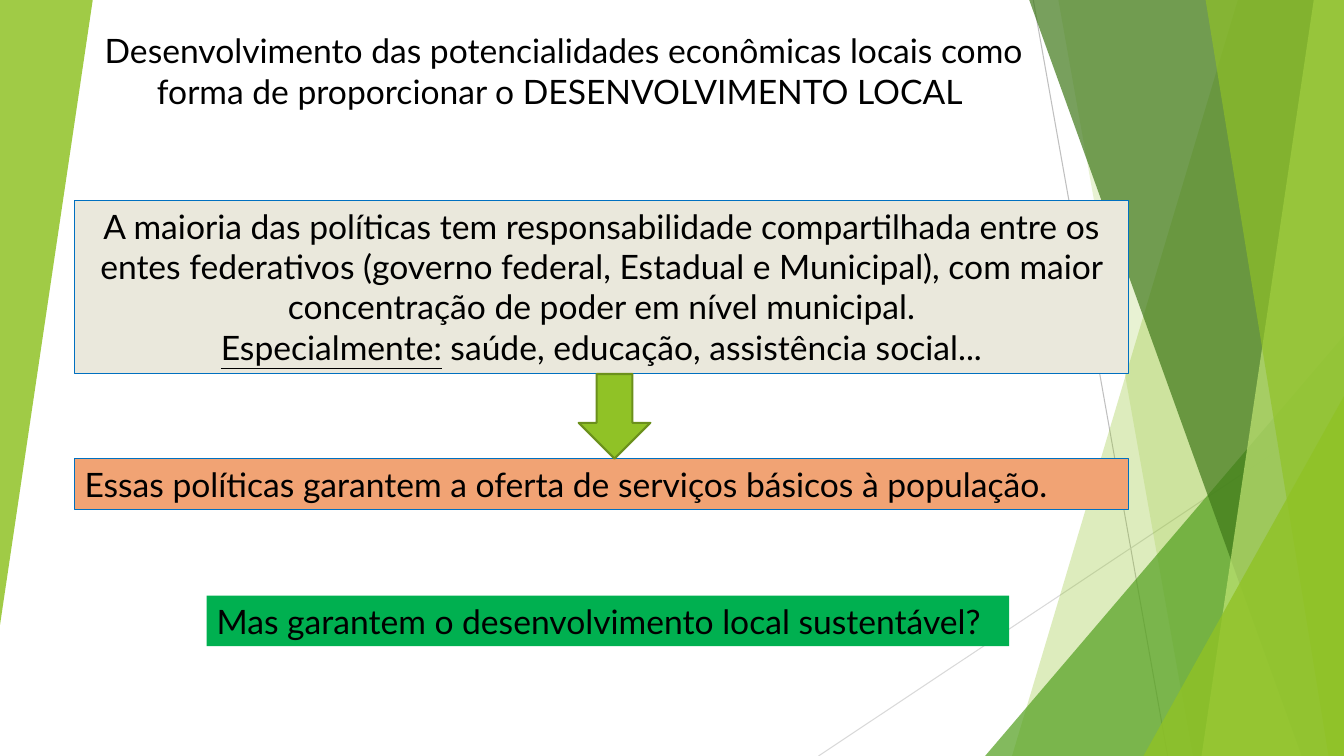
from dataclasses import dataclass
from typing import Optional

import lxml.etree
import pptx
import pptx.dml.color
import pptx.enum.shapes
import pptx.enum.text
import pptx.oxml.ns
import pptx.util

WIDTH = pptx.util.Inches(13.33)
HEIGHT = pptx.util.Inches(7.5)
KINDS = pptx.enum.shapes.MSO_SHAPE
ALIGN = pptx.enum.text.PP_ALIGN


@dataclass(frozen=True)
class Theme:
    font: str = "Lato"
    size: int = 24
    ink: str = "000000"
    lime: str = "90C226"
    leaf: str = "54A021"
    pine: str = "3F7819"
    pale: str = "C0E474"
    moss: str = "6B901C"
    sand: str = "EAE8DC"
    peach: str = "F1A374"
    green: str = "00B050"
    blue: str = "0070C0"
    mist: str = "BFBFBF"
    fog: str = "D9D9D9"
    thin: float = 0.75
    thick: float = 1.5


THEME = Theme()


@dataclass(frozen=True)
class Area:
    left: float
    top: float
    width: float
    height: float


@dataclass(frozen=True)
class Ray:
    start: tuple[float, float]
    end: tuple[float, float]
    color: str


@dataclass(frozen=True)
class Shard:
    top: float
    base: float
    color: str
    alpha: int


@dataclass(frozen=True)
class Wedge:
    area: Area
    color: str
    alpha: int
    turn: int = 0


@dataclass(frozen=True)
class Panel:
    area: Area
    lines: tuple[tuple[str, str], ...]
    fill: Optional[str] = None
    edge: Optional[str] = None
    align: ALIGN = ALIGN.LEFT


RAYS = (
    Ray((76.88, 0), (86.88, 100), THEME.mist),
    Ray((100, 53.73), (60.9, 100), THEME.fog),
)

FACETS = (
    Shard(92.1, 75.3, THEME.lime, 30),
    Shard(78.75, 88.75, THEME.lime, 20),
    Wedge(Area(73.3, 44.4, 26.7, 55.6), THEME.leaf, 72),
    Shard(76.58, 96.85, THEME.pine, 70),
    Shard(97.75, 89.4, THEME.pale, 70),
    Shard(89.7, 98.85, THEME.lime, 65),
    Wedge(Area(85.08, 52.4, 14.92, 47.6), THEME.lime, 80),
    Wedge(Area(0, 0, 6.9, 82.67), THEME.lime, 85, 180),
)

PANELS = (
    Panel(
        Area(4.35, 3.33, 75.17, 12.13),
        (("", "Desenvolvimento das potencialidades econômicas locais como forma "
              "de proporcionar o DESENVOLVIMENTO LOCAL "),),
        align=ALIGN.CENTER,
    ),
    Panel(
        Area(5.55, 26.53, 78.39, 22.93),
        (("", "A maioria das políticas tem responsabilidade compartilhada entre os "
              "entes federativos (governo federal, Estadual e Municipal), com maior "
              "concentração de poder em nível municipal."),
         ("Especialmente:", " saúde, educação, assistência social...")),
        THEME.sand, THEME.blue, ALIGN.CENTER,
    ),
    Panel(
        Area(5.55, 60.67, 78.39, 6.67),
        (("", "Essas políticas garantem a oferta de serviços básicos à população."),),
        THEME.peach, THEME.blue,
    ),
    Panel(
        Area(15.38, 78.8, 59.71, 6.67),
        (("", "Mas garantem o desenvolvimento local sustentável?"),),
        THEME.green,
    ),
)

ARROW = Area(43.06, 49.47, 5.33, 11.2)


def across(share: float) -> int:
    return round(WIDTH * share / 100)


def down(share: float) -> int:
    return round(HEIGHT * share / 100)


def place(area: Area) -> tuple[int, int, int, int]:
    return across(area.left), down(area.top), across(area.width), down(area.height)


def tint(code: str) -> pptx.dml.color.RGBColor:
    return pptx.dml.color.RGBColor.from_string(code)


def paint(shape, fill: Optional[str], edge: Optional[str] = None,
          weight: float = THEME.thin, alpha: int = 100) -> None:
    shape.shadow.inherit = False
    if fill:
        shape.fill.solid()
        shape.fill.fore_color.rgb = tint(fill)
    else:
        shape.fill.background()
    if edge:
        shape.line.color.rgb = tint(edge)
        shape.line.width = pptx.util.Pt(weight)
    else:
        shape.line.fill.background()
    if alpha < 100:
        tone = shape.fill._xPr.find(".//" + pptx.oxml.ns.qn("a:srgbClr"))
        lxml.etree.SubElement(tone, pptx.oxml.ns.qn("a:alpha"), val=str(alpha * 1000))


def draw_ray(shapes, ray: Ray) -> None:
    line = shapes.add_connector(
        pptx.enum.shapes.MSO_CONNECTOR.STRAIGHT,
        across(ray.start[0]), down(ray.start[1]), across(ray.end[0]), down(ray.end[1]))
    line.line.color.rgb = tint(ray.color)
    line.line.width = pptx.util.Pt(THEME.thin)
    lxml.etree.SubElement(line._element.spPr, pptx.oxml.ns.qn("a:effectLst"))


def draw_shard(shapes, shard: Shard) -> None:
    pen = shapes.build_freeform(across(shard.top), 0)
    pen.add_line_segments(
        [(WIDTH, 0), (WIDTH, HEIGHT), (across(shard.base), HEIGHT)], close=True)
    paint(pen.convert_to_shape(), shard.color, alpha=shard.alpha)


def draw_wedge(shapes, wedge: Wedge) -> None:
    shape = shapes.add_shape(KINDS.ISOSCELES_TRIANGLE, *place(wedge.area))
    shape.adjustments[0] = 1
    shape.rotation = wedge.turn
    paint(shape, wedge.color, alpha=wedge.alpha)


def draw_panel(shapes, panel: Panel) -> None:
    if panel.fill:
        shape = shapes.add_shape(KINDS.RECTANGLE, *place(panel.area))
        paint(shape, panel.fill, panel.edge)
    else:
        shape = shapes.add_textbox(*place(panel.area))
    frame = shape.text_frame
    frame.word_wrap = True
    frame.auto_size = pptx.enum.text.MSO_AUTO_SIZE.SHAPE_TO_FIT_TEXT
    frame.vertical_anchor = pptx.enum.text.MSO_ANCHOR.TOP
    frame.text = "\n".join(lead for lead, _ in panel.lines)
    for para, (lead, rest) in zip(frame.paragraphs, panel.lines):
        para.alignment = panel.align
        for run in para.runs:
            run.font.underline = True
        para.add_run().text = rest
        for run in para.runs:
            run.font.name = THEME.font
            run.font.size = pptx.util.Pt(THEME.size)
            run.font.color.rgb = tint(THEME.ink)


def main() -> None:
    deck = pptx.Presentation()
    deck.slide_width, deck.slide_height = WIDTH, HEIGHT
    shapes = deck.slides.add_slide(deck.slide_layouts[6]).shapes
    for ray in RAYS:
        draw_ray(shapes, ray)
    for facet in FACETS:
        if isinstance(facet, Shard):
            draw_shard(shapes, facet)
        else:
            draw_wedge(shapes, facet)
    for panel in PANELS:
        draw_panel(shapes, panel)
    arrow = shapes.add_shape(KINDS.DOWN_ARROW, *place(ARROW))
    paint(arrow, THEME.lime, THEME.moss, THEME.thick)
    deck.save("out.pptx")


if __name__ == "__main__":
    main()
